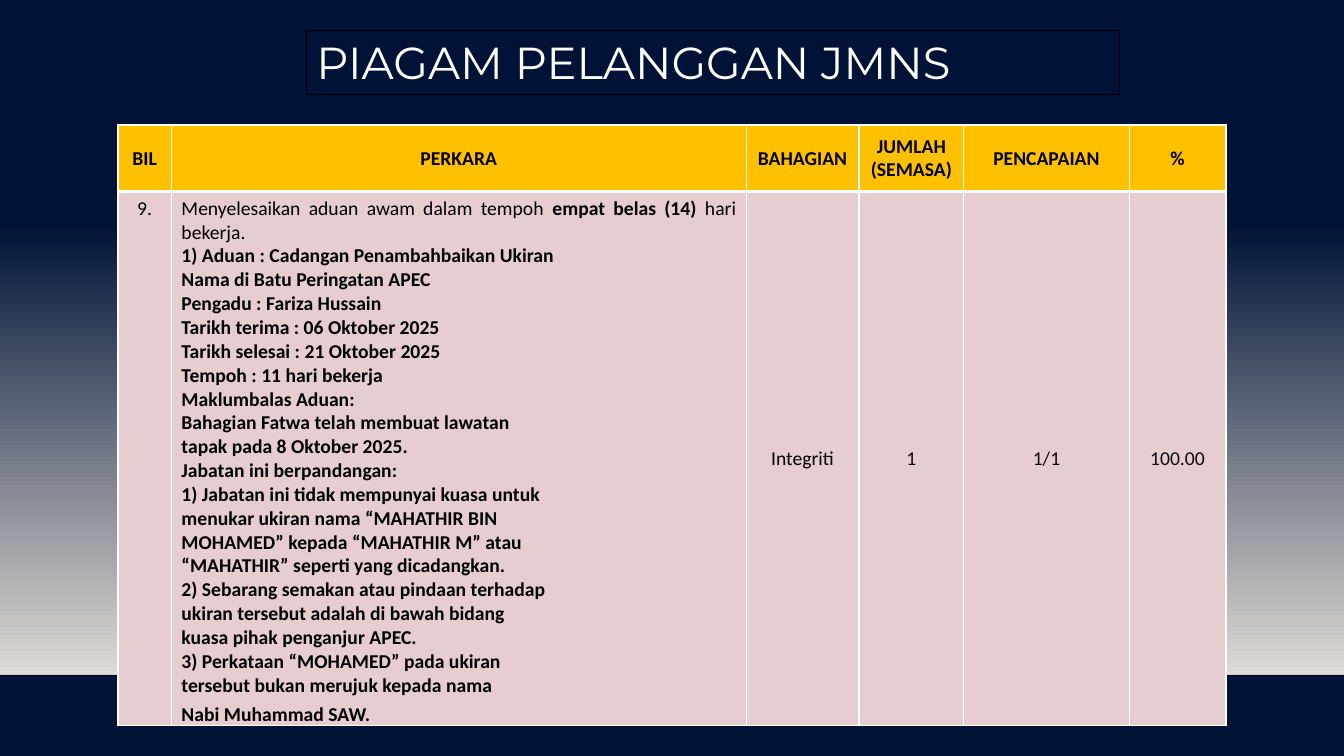
from dataclasses import dataclass
from typing import Any

import pptx
import pptx.dml.color
import pptx.enum.shapes
import pptx.enum.text
import pptx.oxml
import pptx.oxml.ns
import pptx.util

Inches = pptx.util.Inches
Pt = pptx.util.Pt
RGBColor = pptx.dml.color.RGBColor
ALIGN = pptx.enum.text.PP_ALIGN
ANCHOR = pptx.enum.text.MSO_ANCHOR

NAVY = RGBColor(0x00, 0x12, 0x36)
STONE = RGBColor(0xDF, 0xDB, 0xD5)
BLACK = RGBColor(0x00, 0x00, 0x00)
WHITE = RGBColor(0xFF, 0xFF, 0xFF)
AMBER = RGBColor(0xFF, 0xC0, 0x00)
ROSE = RGBColor(0xE6, 0xCD, 0xCF)
INK = RGBColor(0x0D, 0x0D, 0x0D)

SLIDE_WIDTH, SLIDE_HEIGHT = 13.33, 7.5
FLOOR_TOP = 6.7
COLUMN_WIDTHS = (0.53, 5.7, 1.12, 1.04, 1.64, 0.96)
ROW_HEIGHTS = (0.66, 5.3)

TITLE_FONT = {"name": "Montserrat", "size": Pt(32)}
HEADER_FONT = {"name": "Calibri", "size": Pt(14), "bold": True}
BODY_FONT = HEADER_FONT | {"bold": False}


@dataclass(frozen=True)
class Phrase:
    text: str
    bold: bool = False


@dataclass(frozen=True)
class TableEntry:
    paragraphs: list[list[Phrase]]
    fill: RGBColor
    color: RGBColor = BLACK
    align: Any = ALIGN.CENTER
    anchor: Any = ANCHOR.MIDDLE
    bottom_border: float = 1


COMPLAINT_LINES = """1) Aduan : Cadangan Penambahbaikan Ukiran
Nama di Batu Peringatan APEC
Pengadu : Fariza Hussain
Tarikh terima : 06 Oktober 2025
Tarikh selesai : 21 Oktober 2025
Tempoh : 11 hari bekerja
Maklumbalas Aduan:
Bahagian Fatwa telah membuat lawatan
tapak pada 8 Oktober 2025.
Jabatan ini berpandangan:
1) Jabatan ini tidak mempunyai kuasa untuk
menukar ukiran nama “MAHATHIR BIN
MOHAMED” kepada “MAHATHIR M” atau
“MAHATHIR” seperti yang dicadangkan.
2) Sebarang semakan atau pindaan terhadap
ukiran tersebut adalah di bawah bidang
kuasa pihak penganjur APEC.
3) Perkataan “MOHAMED” pada ukiran
tersebut bukan merujuk kepada nama
Nabi Muhammad SAW.""".splitlines()

CHARTER_PLEDGE = [
    Phrase("Menyelesaikan aduan awam dalam tempoh "),
    Phrase("empat belas (14) ", True),
    Phrase("hari bekerja."),
]
HEADINGS = ("BIL", "PERKARA", "BAHAGIAN", "JUMLAH\n(SEMASA)", "PENCAPAIAN", "%")


def apply_format(target: Any, values: dict[str, Any]) -> None:
    for attribute, value in values.items():
        setattr(target, attribute, value)


def add_border(cell: Any, side: str, width: float) -> None:
    border = pptx.oxml.parse_xml(
        f'<a:ln{side} {pptx.oxml.ns.nsdecls("a")} w="{Pt(width)}">'
        f'<a:solidFill><a:srgbClr val="{WHITE}"/></a:solidFill></a:ln{side}>'
    )
    cell._tc.get_or_add_tcPr().append(border)


def fill_cell(cell: Any, entry: TableEntry) -> None:
    for side in "LRT":
        add_border(cell, side, 1)
    add_border(cell, "B", entry.bottom_border)
    cell.fill.solid()
    cell.fill.fore_color.rgb = entry.fill
    cell.vertical_anchor = entry.anchor
    frame = cell.text_frame
    for index, phrases in enumerate(entry.paragraphs):
        paragraph = frame.add_paragraph() if index else frame.paragraphs[0]
        paragraph.alignment = entry.align
        for phrase in phrases:
            run = paragraph.add_run()
            run.text = phrase.text
            apply_format(run.font, BODY_FONT | {"bold": phrase.bold})
            run.font.color.rgb = entry.color


def add_backdrop(slide: Any) -> None:
    slide.background.fill.solid()
    slide.background.fill.fore_color.rgb = NAVY
    glow = slide.shapes.add_shape(
        pptx.enum.shapes.MSO_SHAPE.RECTANGLE,
        Inches(0), Inches(2.21), Inches(SLIDE_WIDTH), Inches(FLOOR_TOP - 2.21),
    )
    glow.shadow.inherit = False
    glow.line.fill.background()
    glow.fill.gradient()
    glow.fill.gradient_angle = 270
    for stop, color in zip(glow.fill.gradient_stops, (NAVY, STONE)):
        stop.color.rgb = color

    floor_edge = slide.shapes.add_connector(
        pptx.enum.shapes.MSO_CONNECTOR.STRAIGHT,
        Inches(0), Inches(FLOOR_TOP), Inches(SLIDE_WIDTH), Inches(FLOOR_TOP),
    )
    floor_edge.line.width = Pt(1)
    floor_edge.line.color.rgb = BLACK
    properties = floor_edge._element.spPr
    tint = properties.find(".//" + pptx.oxml.ns.qn("a:srgbClr"))
    namespace = pptx.oxml.ns.nsdecls("a")
    tint.append(pptx.oxml.parse_xml(f'<a:alpha {namespace} val="20000"/>'))
    properties.append(pptx.oxml.parse_xml(f"<a:effectLst {namespace}/>"))


def add_title(slide: Any) -> None:
    title = slide.shapes.add_textbox(
        Inches(3.04), Inches(0.3), Inches(8.06), Inches(0.64)
    )
    title.line.color.rgb = BLACK
    title.line.width = Pt(0.75)
    title.text_frame.word_wrap = True
    heading = title.text_frame.paragraphs[0]
    heading.alignment = ALIGN.JUSTIFY
    run = heading.add_run()
    run.text = "PIAGAM PELANGGAN JMNS"
    apply_format(run.font, TITLE_FONT)
    run.font.color.rgb = WHITE


def add_charter_table(slide: Any) -> None:
    header = [
        TableEntry([[Phrase(line, True)] for line in text.split("\n")],
                   AMBER, bottom_border=3)
        for text in HEADINGS
    ]
    complaint = [CHARTER_PLEDGE] + [[Phrase(line, True)] for line in COMPLAINT_LINES]
    results = [
        TableEntry([[Phrase("9.")]], ROSE, anchor=ANCHOR.TOP),
        TableEntry(complaint, ROSE, align=ALIGN.JUSTIFY, anchor=ANCHOR.TOP),
        TableEntry([[Phrase("Integriti")]], ROSE),
        *(TableEntry([[Phrase(text)]], ROSE, INK) for text in ("1", "1/1", "100.00")),
    ]
    charter = slide.shapes.add_table(
        len(ROW_HEIGHTS), len(COLUMN_WIDTHS), Inches(1.17), Inches(1.24),
        Inches(sum(COLUMN_WIDTHS)), Inches(sum(ROW_HEIGHTS)),
    ).table
    for column, width in zip(charter.columns, COLUMN_WIDTHS):
        column.width = Inches(width)
    for row, height, entries in zip(charter.rows, ROW_HEIGHTS, (header, results)):
        row.height = Inches(height)
        for cell, entry in zip(row.cells, entries):
            fill_cell(cell, entry)
    charter.cell(1, 1).text_frame.paragraphs[-1].space_before = Pt(4)


def main() -> None:
    presentation = pptx.Presentation()
    presentation.slide_width = Inches(SLIDE_WIDTH)
    presentation.slide_height = Inches(SLIDE_HEIGHT)
    slide = presentation.slides.add_slide(presentation.slide_layouts[6])
    add_backdrop(slide)
    add_title(slide)
    add_charter_table(slide)
    presentation.save("out.pptx")


if __name__ == "__main__":
    main()
